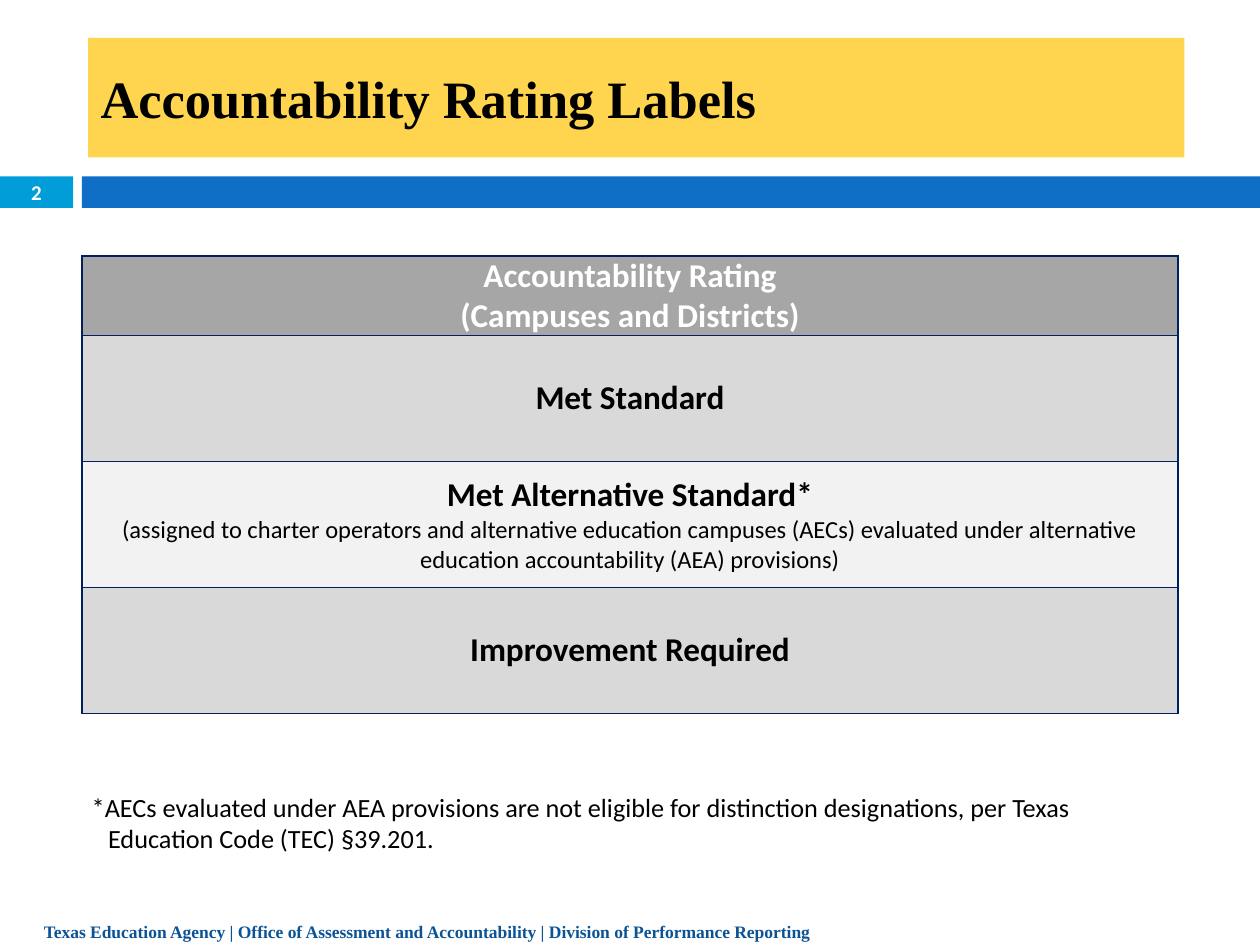
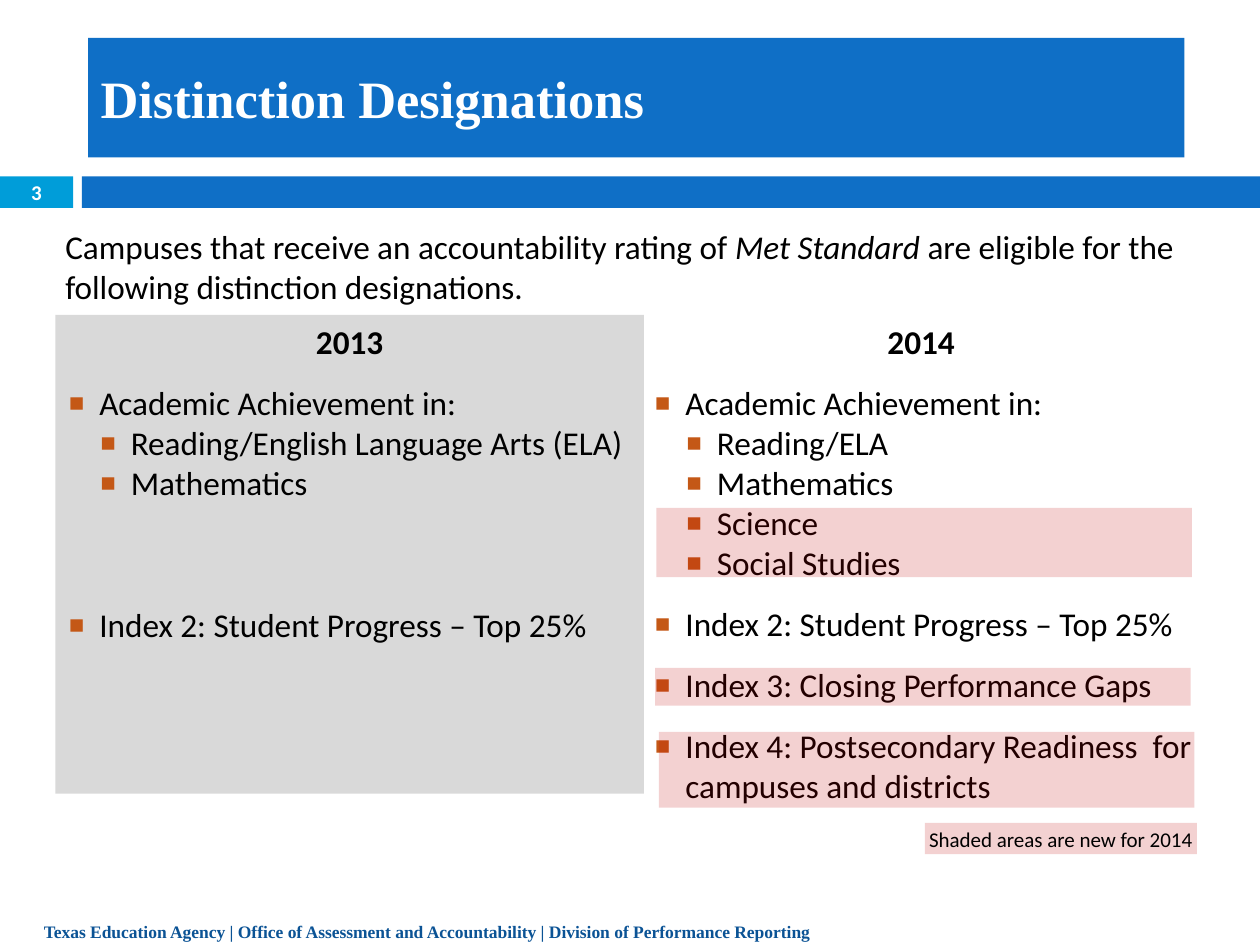
from dataclasses import dataclass
from lxml import etree
from pptx import Presentation
from pptx.dml.color import RGBColor
from pptx.enum.shapes import MSO_SHAPE
from pptx.enum.text import MSO_ANCHOR, PP_ALIGN
from pptx.oxml.ns import qn
from pptx.util import Inches, Pt

RECTANGLE = MSO_SHAPE.RECTANGLE
TOP, MIDDLE = MSO_ANCHOR.TOP, MSO_ANCHOR.MIDDLE
LEFT, CENTER = PP_ALIGN.LEFT, PP_ALIGN.CENTER


@dataclass(frozen=True)
class Theme:
    body_font: str = "Calibri"
    title_font: str = "Times New Roman"
    black: str = "000000"
    white: str = "FFFFFF"
    blue: str = "0F6FC6"
    cyan: str = "009DD9"
    yellow: str = "FFD54F"
    footer: str = "0B5395"
    border: str = "002060"
    header_gray: str = "A6A6A6"
    gray: str = "D9D9D9"
    pale_gray: str = "F2F2F2"
    bullet: str = "C45816"
    highlight: str = "C00000"
    highlight_opacity: int = 18
    title_size: int = 30
    body_size: int = 19
    note_size: int = 15
    detail_size: int = 14
    small_size: int = 12
    footer_size: int = 10
    gap: float = 12.2  # points between groups of bullets
    body_line: float = 23.2  # points taken by one line of body text


THEME = Theme()
CELL = 0.1  # inches: the slide is a grid of 100 columns by 75 rows
COLUMNS, ROWS = 100, 75
BULLET_STEP = 0.25


@dataclass(frozen=True)
class Box:
    """A rectangle in grid columns and rows."""
    left: float
    top: float
    width: float
    height: float

    def area(self, left, top, width, height):
        return Box(self.left + left, self.top + top, width, height)

    def lengths(self):
        return [Inches(round(units * CELL, 3))
                for units in (self.left, self.top, self.width, self.height)]


@dataclass(frozen=True)
class Line:
    """One paragraph; spans listed in italics are set apart from the rest."""
    spans: tuple
    size: float = THEME.body_size
    color: str = THEME.black
    bold: bool = False
    font: str = THEME.body_font
    align: PP_ALIGN = LEFT
    before: float = 0
    spacing: float = 0
    margin: float = 0
    hanging: float = 0
    bullet: bool = False
    italics: tuple = ()


PAGE = Box(0, 0, COLUMNS, ROWS)
TITLE = PAGE.area(7, 3, 87, 9.5)
BAND = PAGE.area(0, 14, COLUMNS, 2.5)
FOOTER = PAGE.area(2.5, 70.7, 90, 4.1)
FOOTER_TEXT = ("Texas Education Agency | Office of Assessment and Accountability"
               " | Division of Performance Reporting")
RATINGS = (
    (6, THEME.header_gray, THEME.white,
     ("Accountability Rating", "(Campuses and Districts)"), ""),
    (10, THEME.gray, THEME.black, ("Met Standard",), ""),
    (10, THEME.pale_gray, THEME.black, ("Met Alternative Standard*",),
     "(assigned to charter operators and alternative education campuses (AECs) "
     "evaluated under alternative education accountability (AEA) provisions)"),
    (10, THEME.gray, THEME.black, ("Improvement Required",), ""),
)
RATING_NOTE = ("*AECs evaluated under AEA provisions are not eligible for distinction "
               "designations, per Texas Education Code (TEC) §39.201.")
ACHIEVEMENT = "Academic Achievement in:"
PROGRESS = "Index 2: Student Progress – Top 25%"


def color_of(code):
    return RGBColor.from_string(code)


def add_child(parent, tag, **attributes):
    return etree.SubElement(parent, qn(tag), attributes)


def add_bullet(para):
    properties = para._p.get_or_add_pPr()
    add_child(add_child(properties, "a:buClr"), "a:srgbClr", val=THEME.bullet)
    add_child(properties, "a:buSzPct", val="150000")
    add_child(properties, "a:buFont", typeface="Arial")
    add_child(properties, "a:buChar", char="▪")


def write(frame, lines, anchor=TOP, insets=(0.1, 0.05)):
    frame.word_wrap = True
    frame.vertical_anchor = anchor
    frame.margin_left = frame.margin_right = Inches(insets[0])
    frame.margin_top = frame.margin_bottom = Inches(insets[1])
    write_lines(frame, lines)


def write_lines(frame, lines):
    for number, line in enumerate(lines):
        para = frame.add_paragraph() if number else frame.paragraphs[0]
        para.alignment = line.align
        para.space_before = Pt(line.before)
        if line.spacing:
            para.line_spacing = Pt(line.spacing)
        if line.hanging:
            properties = para._p.get_or_add_pPr()
            properties.set("marL", str(Inches(line.margin)))
            properties.set("indent", str(-Inches(line.hanging)))
        if line.bullet:
            add_bullet(para)
        para.font.size = Pt(line.size)
        para.font.name = line.font
        para.font.bold = line.bold
        para.font.color.rgb = color_of(line.color)
        for text in line.spans:
            span = para.add_run()
            span.text = text
            if text in line.italics:
                span.font.italic = True


def add_panel(page, box, fill, opacity=100):
    panel = page.shapes.add_shape(RECTANGLE, *box.lengths())
    panel.shadow.inherit = False
    panel.line.fill.background()
    panel.fill.solid()
    panel.fill.fore_color.rgb = color_of(fill)
    if opacity < 100:
        color = panel.element.spPr.find(".//" + qn("a:srgbClr"))
        add_child(color, "a:alpha", val=str(opacity * 1000))
    return panel


def add_highlight(page, box):
    return add_panel(page, box, THEME.highlight, THEME.highlight_opacity)


def add_text(page, box, lines, **layout):
    write(page.shapes.add_textbox(*box.lengths()).text_frame, lines, **layout)


def add_band(page, box, number):
    number_width, bar_left = 5.8, 6.5
    tab = add_panel(page, box.area(0, 0, number_width, box.height), THEME.cyan)
    write(tab.text_frame, [Line((str(number),), THEME.small_size, THEME.white,
                                bold=True, align=CENTER)], anchor=MIDDLE)
    add_panel(page, box.area(bar_left, 0, box.width - bar_left, box.height), THEME.blue)


def add_page(deck, number, title, fill, color):
    """Add a slide with the title, band and footer that all slides share."""
    page = deck.slides.add_slide(deck.slide_layouts[6])
    add_band(page, BAND, number)
    write(add_panel(page, TITLE, fill).text_frame,
          [Line((title,), THEME.title_size, color, True, THEME.title_font)],
          anchor=MIDDLE)
    add_text(page, FOOTER, [Line((FOOTER_TEXT,), THEME.footer_size, THEME.footer,
                                 True, THEME.title_font, spacing=26)])
    return page


def add_borders(cell):
    properties = cell._tc.get_or_add_tcPr()
    for side in ("a:lnL", "a:lnR", "a:lnT", "a:lnB"):
        edge = add_child(properties, side, w=str(Pt(1)))
        add_child(add_child(edge, "a:solidFill"), "a:srgbClr", val=THEME.border)


def add_rating_table(page, box):
    table = page.shapes.add_table(len(RATINGS), 1, *box.lengths()).table
    table.horz_banding = False
    for index, (height, fill, color, labels, detail) in enumerate(RATINGS):
        table.rows[index].height = Inches(height * CELL)
        cell = table.cell(index, 0)
        add_borders(cell)
        cell.fill.solid()
        cell.fill.fore_color.rgb = color_of(fill)
        cell.vertical_anchor = MIDDLE
        cell.margin_left = cell.margin_right = Inches(0.07)
        cell.margin_top = cell.margin_bottom = 0
        lines = [Line((label,), color=color, bold=True, align=CENTER) for label in labels]
        if detail:
            lines.append(Line((detail,), THEME.detail_size, color, align=CENTER))
        write_lines(cell.text_frame, lines)


def year_lines(year, margin, items):
    """Return a centred year, then bullets from (text, level, space before)."""
    heading = Line((year,), bold=True, align=CENTER)
    return [heading] + [
        Line((text,), before=before, margin=margin + level * BULLET_STEP,
             hanging=BULLET_STEP, bullet=True)
        for text, level, before in items]


def add_2013_column(page, box):
    missing_subjects = 2 * THEME.body_line
    items = ((ACHIEVEMENT, 0, THEME.gap),
             ("Reading/English Language Arts (ELA)", 1, 0),
             ("Mathematics", 1, 0),
             (PROGRESS, 0, THEME.gap + missing_subjects))
    write(add_panel(page, box, THEME.gray).text_frame,
          year_lines("2013", BULLET_STEP, items))


def add_2014_column(page, box):
    items = ((ACHIEVEMENT, 0, THEME.gap),
             ("Reading/ELA", 1, 0),
             ("Mathematics", 1, 0),
             ("Science", 1, 0),
             ("Social Studies", 1, 0),
             (PROGRESS, 0, THEME.gap),
             ("Index 3: Closing Performance Gaps", 0, THEME.gap),
             ("Index 4: Postsecondary Readiness  for campuses and districts", 0, THEME.gap))
    add_text(page, box, year_lines("2014", 0.37, items), insets=(0, 0.05))
    for left, top, height in ((1.4, 15.3, 5.5), (1.3, 28, 3), (1.6, 33.1, 6)):
        add_highlight(page, box.area(left, top, 42.5, height))
    legend = add_highlight(page, box.area(22.7, 40.3, 21.6, 2.5))
    write(legend.text_frame, [Line(("Shaded areas are new for 2014",), THEME.small_size,
                                   align=CENTER)], insets=(0.03, 0.03))


def build_rating_page(deck):
    page = add_page(deck, 2, "Accountability Rating Labels", THEME.yellow, THEME.black)
    add_rating_table(page, PAGE.area(6.5, 20.3, 87, 36))
    add_text(page, PAGE.area(6.3, 62.3, 87.3, 6.5),
             [Line((RATING_NOTE,), THEME.note_size, margin=0.13, hanging=0.13)])


def build_distinction_page(deck):
    page = add_page(deck, 3, "Distinction Designations", THEME.blue, THEME.white)
    rating = "Met Standard "
    add_text(page, PAGE.area(4.2, 17.5, 90.4, 7.4), [Line(
        ("Campuses that receive an accountability rating of ", rating,
         "are eligible for the following distinction designations."),
        italics=(rating,))])
    add_2013_column(page, PAGE.area(4.4, 25, 46.7, 38))
    add_2014_column(page, PAGE.area(50.7, 25, 44.8, 39.7))


def main():
    deck = Presentation()
    deck.slide_width = Inches(COLUMNS * CELL)
    deck.slide_height = Inches(ROWS * CELL)
    build_rating_page(deck)
    build_distinction_page(deck)
    deck.save("out.pptx")


if __name__ == "__main__":
    main()
